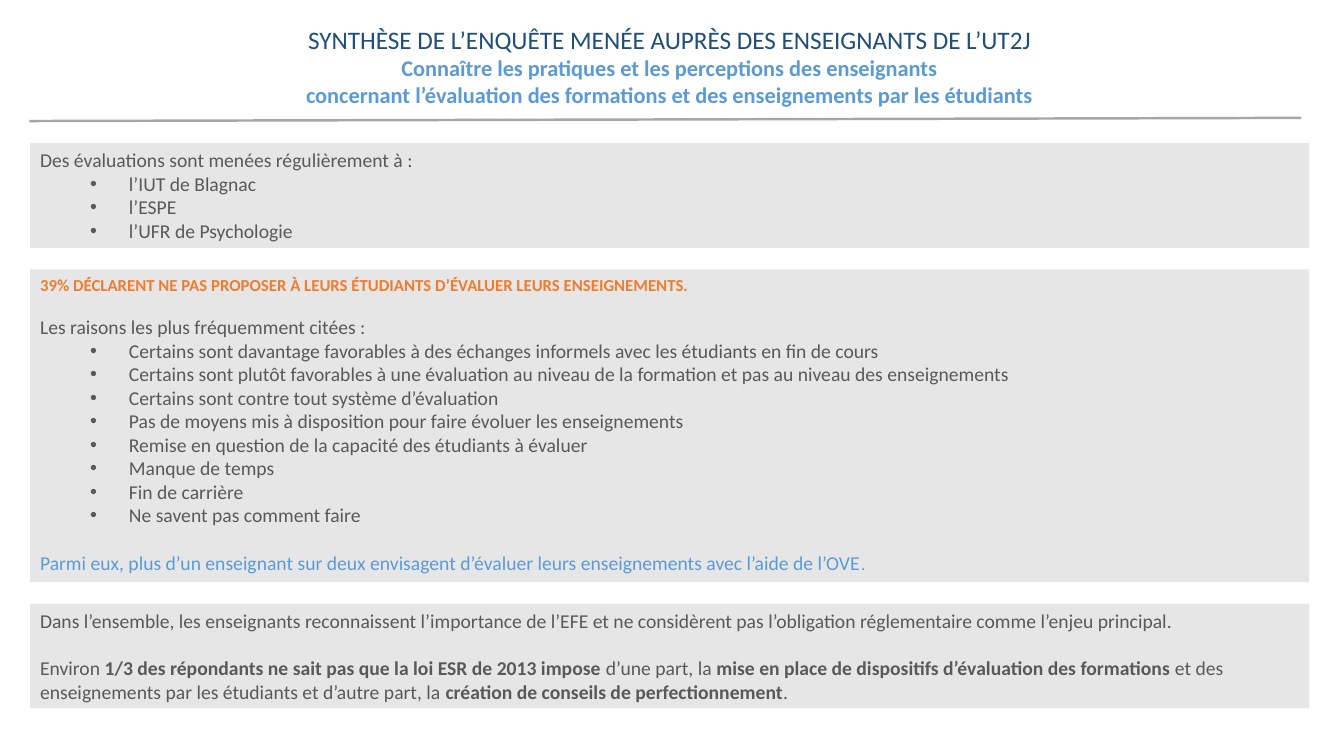
from lxml.etree import SubElement
from pptx import Presentation
from pptx.dml.color import RGBColor
from pptx.enum.shapes import MSO_CONNECTOR, MSO_SHAPE
from pptx.enum.text import MSO_ANCHOR, PP_ALIGN
from pptx.oxml.ns import qn
from pptx.util import Cm, Pt

FONT = "Calibri"
PANEL_FILL = "E7E6E6"
RULE_COLOR = "A6A6A6"
LINE_HEIGHT = 1.22

STYLES = {
    "title": (18, "1F4E79", False),
    "subtitle": (16, "5B9BD5", True),
    "alert": (12, "ED7D31", True),
    "body": (14, "595959", False),
    "bullet": (14, "595959", False),
    "closing": (14, "5B9BD5", False),
}

HEADING = [
    ("title", "SYNTHÈSE DE L’ENQUÊTE MENÉE AUPRÈS DES ENSEIGNANTS DE L’UT2J"),
    ("subtitle", "Connaître les pratiques et les perceptions des enseignants"),
    ("subtitle", "concernant l’évaluation des formations et des enseignements par les étudiants"),
]

REGULAR = [
    ("body", "Des évaluations sont menées régulièrement à :"),
    ("bullet", "l’IUT de Blagnac"),
    ("bullet", "l’ESPE"),
    ("bullet", "l’UFR de Psychologie"),
]

REASONS = [
    ("alert", "39% DÉCLARENT NE PAS PROPOSER À LEURS ÉTUDIANTS D’ÉVALUER LEURS ENSEIGNEMENTS."),
    ("gap", 12),
    ("body", "Les raisons les plus fréquemment citées :"),
    ("bullet", "Certains sont davantage favorables à des échanges informels avec les étudiants en fin de cours"),
    ("bullet", "Certains sont plutôt favorables à une évaluation au niveau de la formation et pas au niveau des enseignements"),
    ("bullet", "Certains sont contre tout système d’évaluation"),
    ("bullet", "Pas de moyens mis à disposition pour faire évoluer les enseignements"),
    ("bullet", "Remise en question de la capacité des étudiants à évaluer"),
    ("bullet", "Manque de temps"),
    ("bullet", "Fin de carrière"),
    ("bullet", "Ne savent pas comment faire"),
    ("gap", 14),
    ("closing", [
        ("Parmi eux, plus d’un enseignant sur deux envisagent d’évaluer leurs enseignements avec l’aide de l’OVE", {}),
        (".", {"size": Pt(12)}),
    ]),
]

OVERALL = [
    ("body", "Dans l’ensemble, les enseignants reconnaissent l’importance de l’EFE et ne considèrent pas l’obligation réglementaire comme l’enjeu principal."),
    ("gap", 14),
    ("body", [
        ("Environ ", {}),
        ("1/3 des répondants ne sait pas que la loi ESR de 2013 impose", {"bold": True}),
        (" d’une part, la ", {}),
        ("mise en place de dispositifs d’évaluation des formations", {"bold": True}),
        (" et des enseignements par les étudiants et d’autre part, la ", {}),
        ("création de conseils de perfectionnement", {"bold": True}),
        (".", {}),
    ]),
]

LEFT, WIDTH = 0.76, 32.23
PANEL_TOP, PANEL_GAP = 3.61, 0.54
PANELS = [(REGULAR, 2.64), (REASONS, 7.88), (OVERALL, 2.64)]


def color(value):
    return RGBColor.from_string(value)


def add_bullet(para):
    properties = para._p.get_or_add_pPr()
    properties.set("marL", str(Cm(2.24)))
    properties.set("indent", str(Cm(-0.98)))
    SubElement(properties, qn("a:buFont")).set("typeface", "Arial")
    SubElement(properties, qn("a:buChar")).set("char", "•")


def write(box, lines, alignment):
    frame = box.text_frame
    frame.word_wrap = True
    frame.vertical_anchor = MSO_ANCHOR.TOP
    para, gap = None, 0
    for style, content in lines:
        if style == "gap":
            gap = content * LINE_HEIGHT
            continue
        para = frame.add_paragraph() if para else frame.paragraphs[0]
        para.alignment = alignment
        para.space_before = Pt(gap)
        gap = 0
        if style == "bullet":
            add_bullet(para)
        size, ink, bold = STYLES[style]
        para.font.name = FONT
        para.font.size = Pt(size)
        para.font.bold = bold
        para.font.color.rgb = color(ink)
        spans = [(content, {})] if isinstance(content, str) else content
        for text, changes in spans:
            span = para.add_run()
            span.text = text
            for name, value in changes.items():
                setattr(span.font, name, value)


def add_panel(page, lines, top, height):
    panel = page.shapes.add_shape(MSO_SHAPE.RECTANGLE, Cm(LEFT), Cm(top), Cm(WIDTH), Cm(height))
    panel.shadow.inherit = False
    panel.fill.solid()
    panel.fill.fore_color.rgb = color(PANEL_FILL)
    panel.line.fill.background()
    write(panel, lines, PP_ALIGN.LEFT)


def main():
    deck = Presentation()
    deck.slide_width, deck.slide_height = Cm(33.87), Cm(19.05)
    page = deck.slides.add_slide(deck.slide_layouts[6])

    heading = page.shapes.add_textbox(Cm(LEFT), Cm(0.48), Cm(WIDTH), Cm(2.39))
    write(heading, HEADING, PP_ALIGN.CENTER)

    rule = page.shapes.add_connector(MSO_CONNECTOR.STRAIGHT, Cm(0.74), Cm(3.05), Cm(32.79), Cm(2.97))
    rule.line.color.rgb = color(RULE_COLOR)
    rule.line.width = Pt(1.75)
    SubElement(rule._element.spPr, qn("a:effectLst"))

    top = PANEL_TOP
    for lines, height in PANELS:
        add_panel(page, lines, top, height)
        top += height + PANEL_GAP

    deck.save("out.pptx")


if __name__ == "__main__":
    main()
